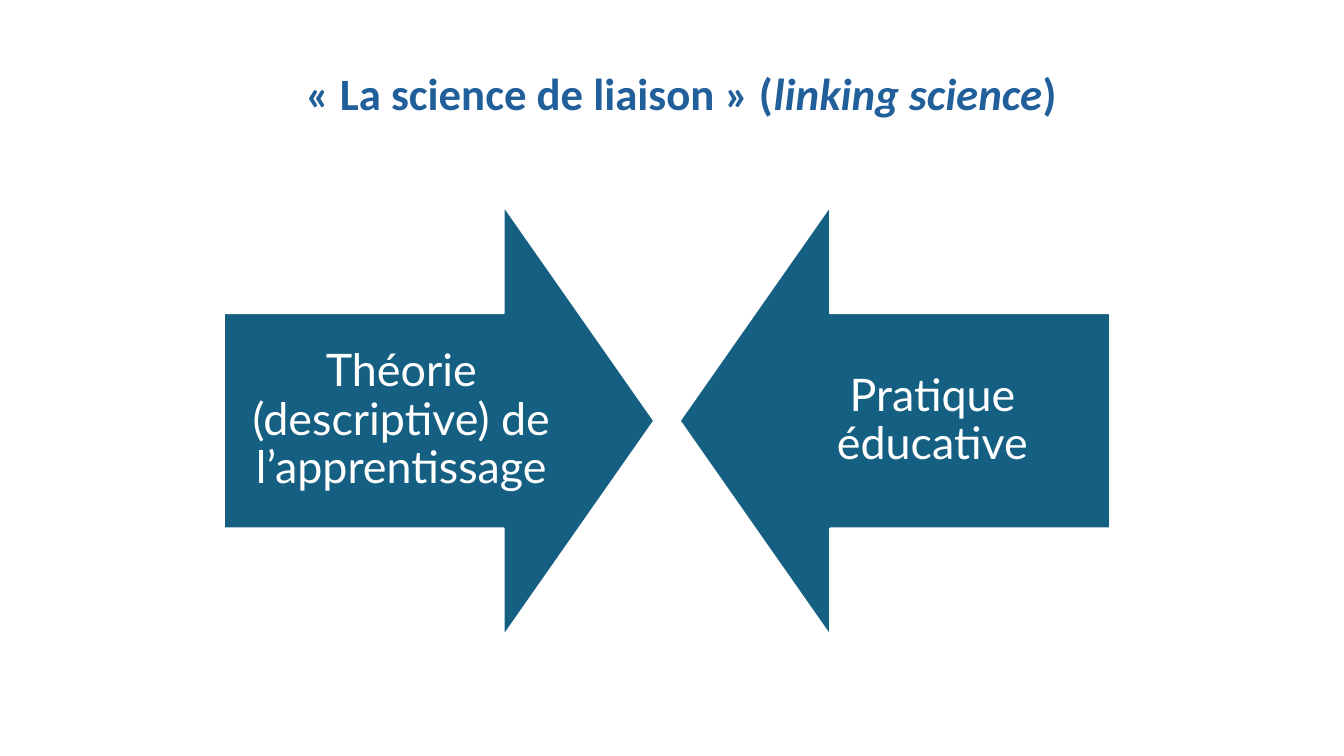
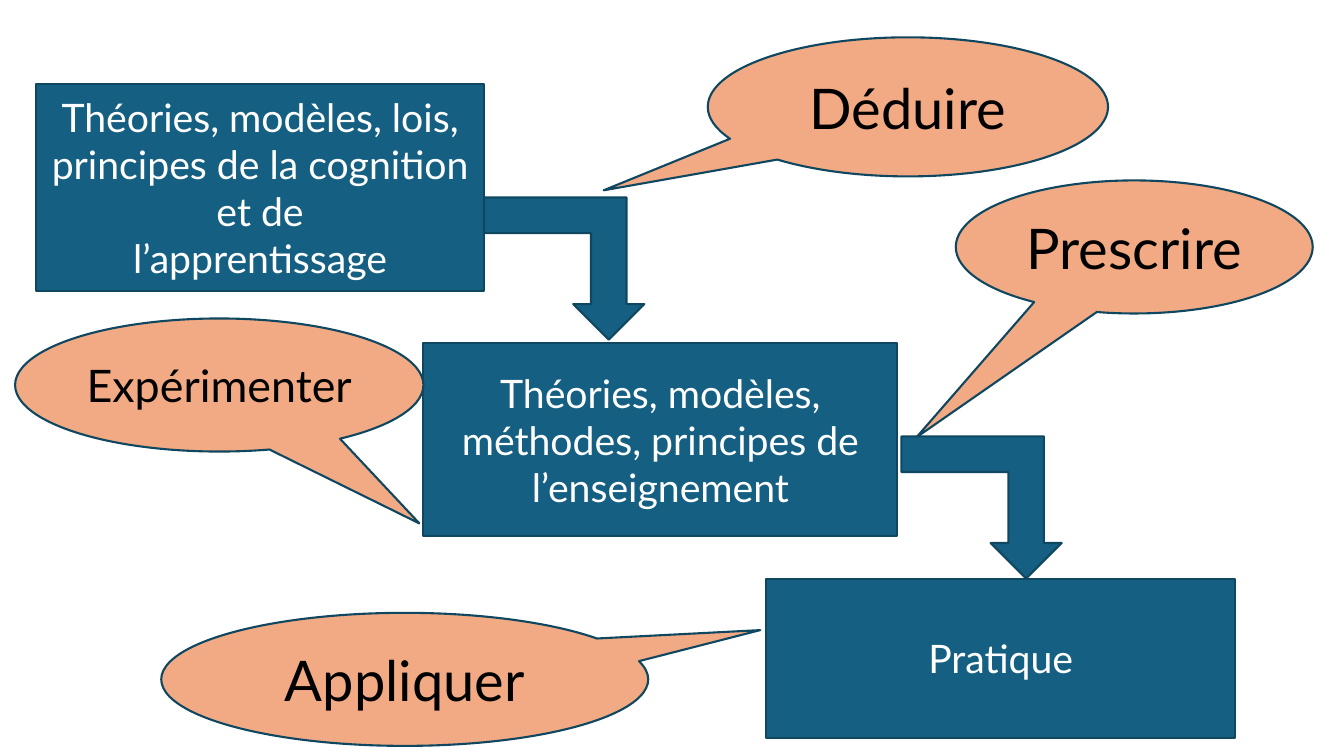
import pptx
import pptx.util
import pptx.dml.color
import pptx.enum.shapes
import pptx.enum.text
import pptx.oxml.ns

Color = pptx.dml.color.RGBColor
Shape = pptx.enum.shapes.MSO_SHAPE

PX = 9144  # EMU, 100 px to the inch
PAGE_WIDTH, PAGE_HEIGHT = 1333, 750

WHITE = Color(0xFF, 0xFF, 0xFF)
BLACK = Color(0x00, 0x00, 0x00)
TITLE_BLUE = Color(0x21, 0x5F, 0x9A)
TEAL = Color(0x15, 0x60, 0x82)
DARK_TEAL = Color(0x10, 0x47, 0x60)
PEACH = Color(0xF2, 0xAA, 0x84)

TITLE_FONT = "Calibri"
BODY_FONT = "Lato"


def px(*lengths):
    return [pptx.util.Emu(length * PX) for length in lengths]


def style_span(span, font, size, color):
    span.font.name = font
    span.font.size = pptx.util.Pt(size)
    span.font.color.rgb = color


def center_text(frame, line_spacing=1.0):
    frame.word_wrap = True
    frame.vertical_anchor = pptx.enum.text.MSO_ANCHOR.MIDDLE
    for para in frame.paragraphs:
        para.alignment = pptx.enum.text.PP_ALIGN.CENTER
        para.line_spacing = line_spacing


def add_figure(page, kind, box, fill, line=DARK_TEAL, adjustments=()):
    figure = page.shapes.add_shape(kind, *px(*box))
    figure.shadow.inherit = False
    figure.fill.solid()
    figure.fill.fore_color.rgb = fill
    figure.line.color.rgb = line
    figure.line.width = pptx.util.Pt(1.5)
    for index, value in enumerate(adjustments):
        figure.adjustments[index] = value
    return figure


def write(figure, text, size, color, line_spacing=1.0):
    frame = figure.text_frame
    frame.text = text
    center_text(frame, line_spacing)
    for para in frame.paragraphs:
        for span in para.runs:
            style_span(span, BODY_FONT, size, color)


def add_title(page, box, parts):
    """Parts are pairs of a text and whether it is italic."""
    frame = page.shapes.add_textbox(*px(*box)).text_frame
    for text, italic in parts:
        span = frame.paragraphs[0].add_run()
        span.text = text
        style_span(span, TITLE_FONT, 32, TITLE_BLUE)
        span.font.bold = True
        span.font.italic = italic
    center_text(frame, 0.9)


def add_facing_arrows(page, box, left_text, right_text):
    """Two square arrows that point at each other from the ends of the box."""
    left, top, width, side = box
    arrows = (
        (Shape.RIGHT_ARROW, left, left_text),
        (Shape.LEFT_ARROW, left + width - side, right_text),
    )
    for kind, arrow_left, text in arrows:
        arrow = add_figure(page, kind, (arrow_left, top, side, side),
                           TEAL, WHITE, (0.5, 0.35))
        frame = arrow.text_frame
        frame.margin_left, frame.margin_right = px(25, 25)
        frame.margin_top, frame.margin_bottom = px(25, 25)
        write(arrow, text, 32, WHITE, 0.9)


def add_step(page, box, text):
    write(add_figure(page, Shape.RECTANGLE, box, TEAL), text, 28, WHITE)


def add_bent_arrow(page, left, top):
    """Arrow that runs right and then down."""
    arrow = add_figure(page, Shape.BENT_UP_ARROW, (left, top, 159, 141), TEAL)
    frame = arrow.element.spPr.find(pptx.oxml.ns.qn("a:xfrm"))
    frame.set("flipV", "1")


def add_callout(page, box, tip, text, size=40):
    """Tip is the offset from the centre, as a share of width and height."""
    callout = add_figure(page, Shape.OVAL_CALLOUT, box, PEACH, adjustments=tip)
    write(callout, text, size, BLACK)


def build_linking_page(page):
    add_title(page, (63, 42, 1215, 106), (
        (" «\u00a0La science de liaison\u00a0» (", False),
        ("linking science", True),
        (")", False),
    ))
    add_facing_arrows(page, (222, 204, 879, 427),
                      "Théorie (descriptive) de l’apprentissage",
                      "Pratique éducative")


def build_steps_page(page):
    add_step(page, (36, 83, 444, 206),
             "Théories, modèles, lois, principes de la cognition et de\n"
             "l’apprentissage")
    add_step(page, (760, 574, 465, 158), "Pratique")
    add_step(page, (420, 340, 470, 192),
             "Théories, modèles, méthodes, principes de l’enseignement")
    add_bent_arrow(page, 480, 196)
    add_callout(page, (702, 37, 397, 138), (-0.76, 0.6), "Déduire")
    add_callout(page, (948, 179, 354, 132), (-0.61, 1.43), "Prescrire")
    add_callout(page, (160, 608, 483, 132), (0.73, -0.37), "Appliquer")
    add_callout(page, (15, 316, 405, 132), (0.49, 1.04), "Expérimenter", 32)
    add_bent_arrow(page, 894, 433)


def main():
    deck = pptx.Presentation()
    deck.slide_width, deck.slide_height = px(PAGE_WIDTH, PAGE_HEIGHT)
    blank = deck.slide_layouts[6]
    for build in (build_linking_page, build_steps_page):
        build(deck.slides.add_slide(blank))
    deck.save("out.pptx")


if __name__ == "__main__":
    main()
